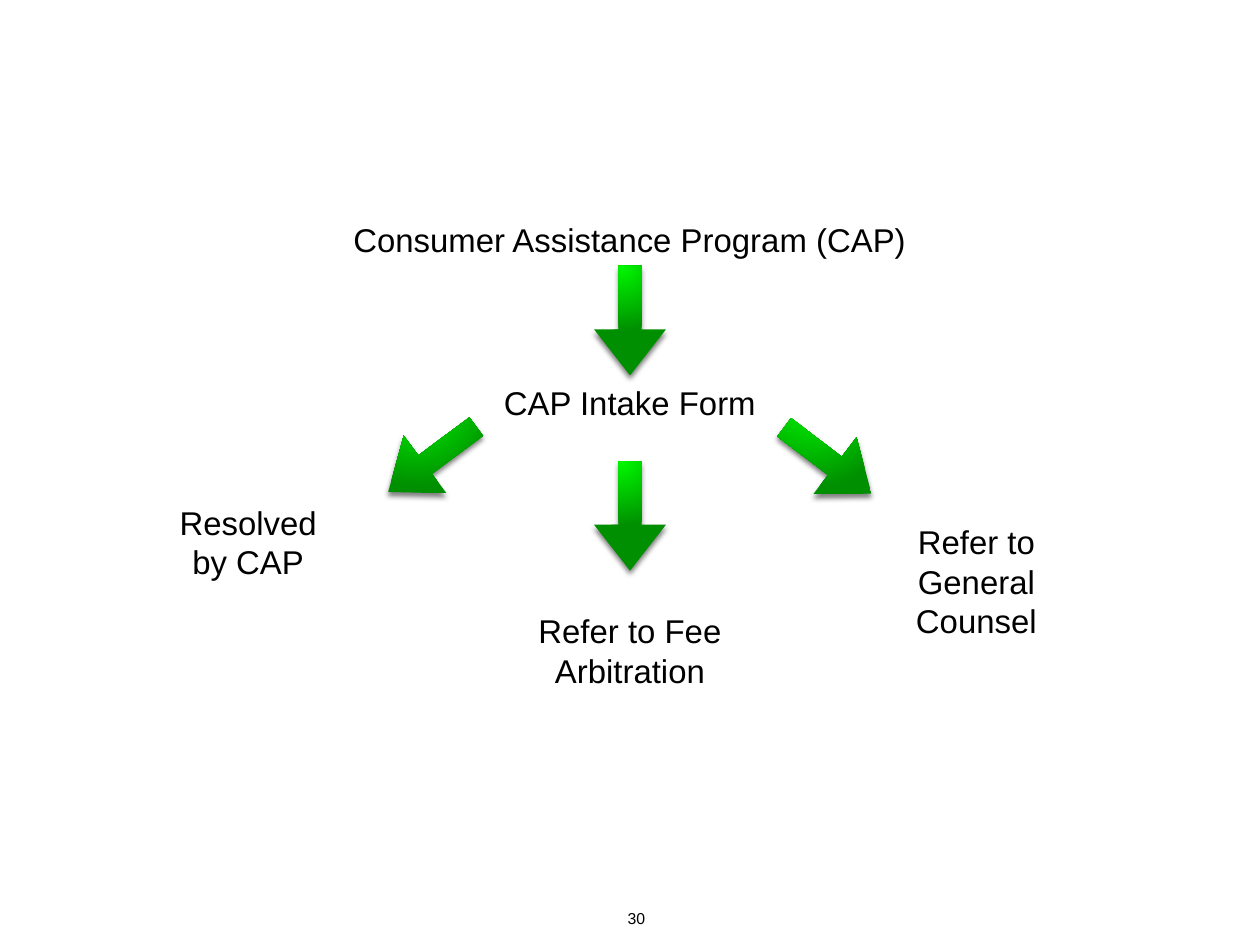
from lxml.etree import fromstring
from pptx import Presentation
from pptx.dml.color import RGBColor as RGB
from pptx.enum.shapes import MSO_SHAPE as Form
from pptx.enum.text import MSO_ANCHOR as Anchor, MSO_AUTO_SIZE as Auto, PP_ALIGN as Align
from pptx.util import Inches, Pt

HUES = {"ink": "000000", "light": "00F900", "dark": "008F00"}
NS = 'xmlns:a="http://schemas.openxmlformats.org/drawingml/2006/main"'

# Radial green fade that stays upright when the arrow turns
FADE = f'''<a:gradFill {NS} rotWithShape="0"><a:gsLst>
<a:gs pos="0"><a:srgbClr val="{HUES["light"]}"/></a:gs>
<a:gs pos="100000"><a:srgbClr val="{HUES["dark"]}"/></a:gs></a:gsLst>
<a:path path="circle"><a:fillToRect l="38000" t="-20000" r="62000" b="120000"/></a:path>
</a:gradFill>'''
SHADE = f'''<a:effectLst {NS}><a:outerShdw blurRad="{Pt(3)}" dist="{Pt(2)}"
dir="5400000" rotWithShape="0"><a:srgbClr val="{HUES["ink"]}"><a:alpha val="50000"/></a:srgbClr>
</a:outerShdw></a:effectLst>'''


class Chart:
    """Flow chart on a grid of 100 columns by 75 rows, placed by centres."""
    face, size = "Arial", 18.8
    cols, rows = 100, 75

    def __init__(self, deck):
        self.wide, self.high = deck.slide_width, deck.slide_height
        self.slide = deck.slides.add_slide(deck.slide_layouts[5])

    def frame(self, mid, span):
        wide, high = self.wide / self.cols, self.high / self.rows
        (x, y), (w, h) = mid, span
        return [round(v) for v in ((x - w / 2) * wide, (y - h / 2) * high, w * wide, h * high)]

    def letter(self, shape, words, size, pad, wrap, anchor):
        frame = shape.text_frame
        form = {"word_wrap": wrap, "auto_size": Auto.SHAPE_TO_FIT_TEXT, "vertical_anchor": anchor}
        form.update({f"margin_{side}": Inches(pad) for side in ("left", "right", "top", "bottom")})
        for key, value in form.items():
            setattr(frame, key, value)
        para = frame.paragraphs[0]
        para.alignment = Align.CENTER
        run = para.add_run()
        run.text = words
        for key, value in {"name": self.face, "size": Pt(size), "bold": False}.items():
            setattr(run.font, key, value)
        run.font.color.rgb = RGB.from_string(HUES["ink"])

    def title(self, words, mid, span):
        shape = self.slide.shapes.title
        sides = ("left", "top", "width", "height")
        for key, value in zip(sides, self.frame(mid, span)):
            setattr(shape, key, value)
        self.letter(shape, words, self.size, 0.02, False, Anchor.MIDDLE)

    def label(self, words, mid, span, size=size, pad=0.02, wrap=True, anchor=Anchor.MIDDLE):
        shape = self.slide.shapes.add_textbox(*self.frame(mid, span))
        self.letter(shape, words, size, pad, wrap, anchor)

    def arrow(self, mid, turn):
        shape = self.slide.shapes.add_shape(Form.RIGHT_ARROW, *self.frame(mid, (8.7, 5.7)))
        shape.rotation = turn
        shape.adjustments[0], shape.adjustments[1] = 0.32, 0.64
        shape.line.fill.background()
        edge = shape.line._ln
        edge.addprevious(fromstring(FADE))
        edge.addnext(fromstring(SHADE))


def main():
    deck = Presentation()
    deck.slide_width, deck.slide_height = Inches(10), Inches(7.5)
    chart = Chart(deck)

    # Start and intake
    chart.title("Consumer Assistance Program (CAP)", (50, 19), (44.6, 3.6))
    chart.label("CAP Intake Form", (50, 31.9), (20.6, 3.6), wrap=False)

    # Outcomes
    for words, mid, span in (
        ("Resolved by CAP", (19.7, 43), (13.8, 6.7)),
        ("Refer to Fee Arbitration", (50, 51.6), (19.9, 6.7)),
        ("Refer to General Counsel", (77.5, 46.1), (13.8, 9.9)),
    ):
        chart.label(words, mid, span)

    # Arrows: down to intake, then down, left and right to the outcomes
    for mid, turn in (
        ((50, 25.45), 90),
        ((50, 40.95), 90),
        ((34.3, 36.45), 143.4),
        ((65.7, 36.55), 37.2),
    ):
        chart.arrow(mid, turn)

    # Page number
    chart.label("30", (50.5, 72.8), (3, 2.6), size=9, pad=0.06, wrap=False, anchor=Anchor.TOP)
    deck.save("out.pptx")


if __name__ == "__main__":
    main()
